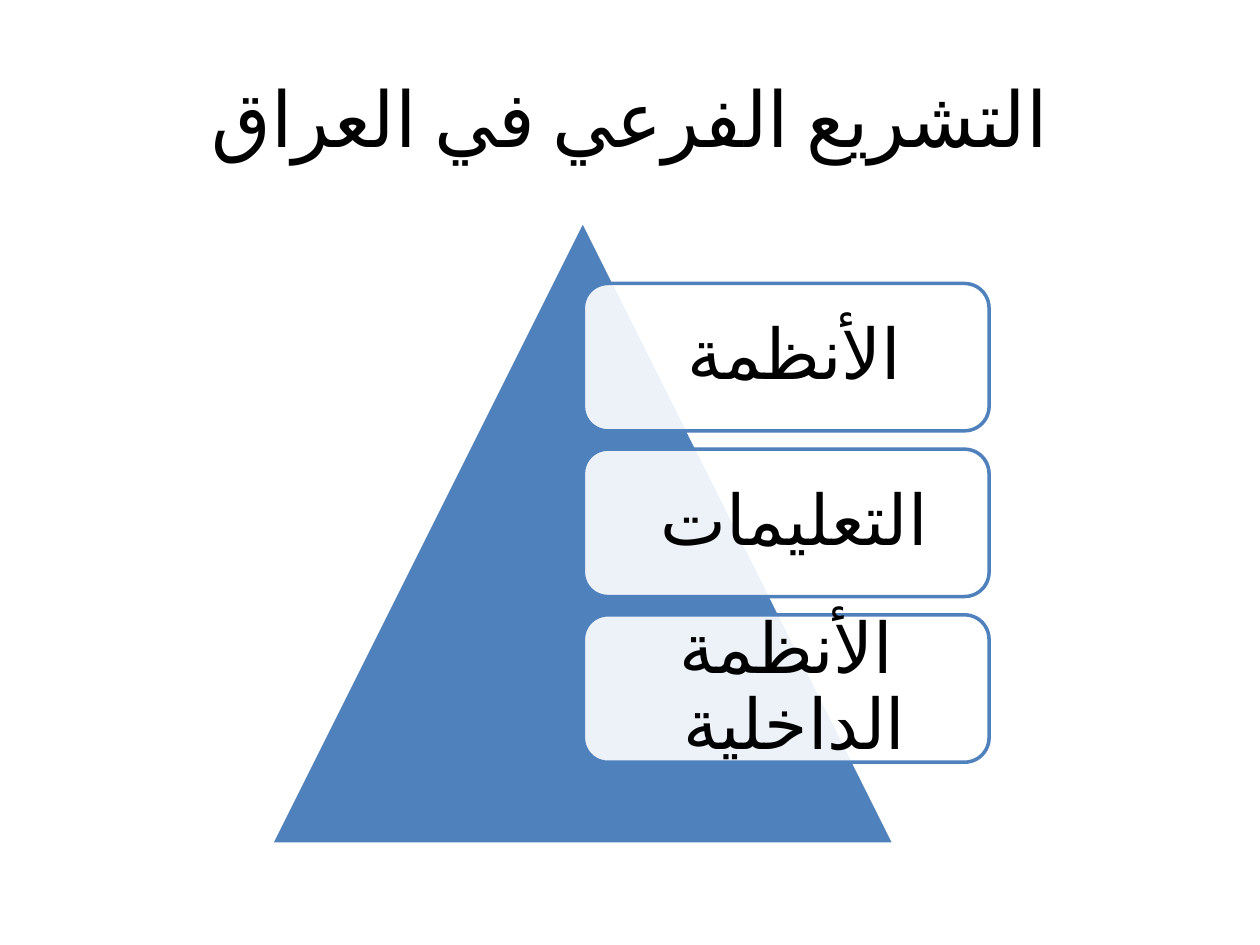
import lxml.etree
import pptx
import pptx.util
import pptx.dml.color
import pptx.enum.lang
import pptx.enum.shapes
import pptx.enum.text
import pptx.oxml
from pptx.util import Inches

BLACK = pptx.dml.color.RGBColor(0x00, 0x00, 0x00)
WHITE = pptx.dml.color.RGBColor(0xFF, 0xFF, 0xFF)
BLUE = pptx.dml.color.RGBColor(0x4F, 0x81, 0xBD)

FONT = "Calibri"
TITLE = "التشريع الفرعي في العراق"
LEVELS = ["الأنظمة ", "التعليمات ", "الأنظمة الداخلية "]
LEVEL_TOP = 2.25
LEVEL_STEP = 1.315


def write_arabic(shape, text, size):
    """Fill the shape with one centred right-to-left paragraph."""
    frame = shape.text_frame
    frame.word_wrap = True
    frame.vertical_anchor = pptx.enum.text.MSO_ANCHOR.MIDDLE
    paragraph = frame.paragraphs[0]
    paragraph.text = text
    paragraph.alignment = pptx.enum.text.PP_ALIGN.CENTER
    properties = paragraph._p.get_or_add_pPr()
    properties.set("rtl", "1")
    paragraph.font.name = FONT
    paragraph.font.size = pptx.util.Pt(size)
    paragraph.font.color.rgb = BLACK
    paragraph.font.language_id = pptx.enum.lang.MSO_LANGUAGE_ID.ARABIC_IRAQ
    # Arabic letters take the complex-script font, not the Latin one.
    lxml.etree.SubElement(
        properties.find(pptx.oxml.ns.qn("a:defRPr")),
        pptx.oxml.ns.qn("a:cs"), {"typeface": FONT})
    return paragraph


def add_filled_shape(slide, preset, left, top, width, height, fill, line):
    shape = slide.shapes.add_shape(
        preset, Inches(left), Inches(top), Inches(width), Inches(height))
    shape.shadow.inherit = False
    shape.fill.solid()
    shape.fill.fore_color.rgb = fill
    shape.line.color.rgb = line
    shape.line.width = pptx.util.Pt(2)
    return shape


def set_opacity(shape, percent):
    color = shape._element.spPr.find(pptx.oxml.ns.qn("a:solidFill"))[0]
    lxml.etree.SubElement(
        color, pptx.oxml.ns.qn("a:alpha"), {"val": str(percent * 1000)})


def add_title(slide):
    title = slide.shapes.add_textbox(
        Inches(0.5), Inches(0.3), Inches(9), Inches(1.25))
    write_arabic(title, TITLE, 44)


def add_level(slide, top, text):
    level = add_filled_shape(
        slide, pptx.enum.shapes.MSO_SHAPE.ROUNDED_RECTANGLE,
        4.63, top, 3.22, 1.17, WHITE, BLUE)
    set_opacity(level, 90)
    frame = level.text_frame
    frame.margin_left = frame.margin_right = Inches(0.17)
    frame.margin_top = frame.margin_bottom = Inches(0.17)
    write_arabic(level, text, 40).line_spacing = 0.9


def main():
    presentation = pptx.Presentation()
    presentation.slide_width = Inches(10)
    presentation.slide_height = Inches(7.5)
    slide = presentation.slides.add_slide(presentation.slide_layouts[6])

    add_title(slide)
    add_filled_shape(
        slide, pptx.enum.shapes.MSO_SHAPE.ISOSCELES_TRIANGLE,
        2.15, 1.75, 4.95, 4.95, BLUE, WHITE)
    for index, text in enumerate(LEVELS):
        add_level(slide, LEVEL_TOP + index * LEVEL_STEP, text)

    presentation.save("out.pptx")


if __name__ == "__main__":
    main()
